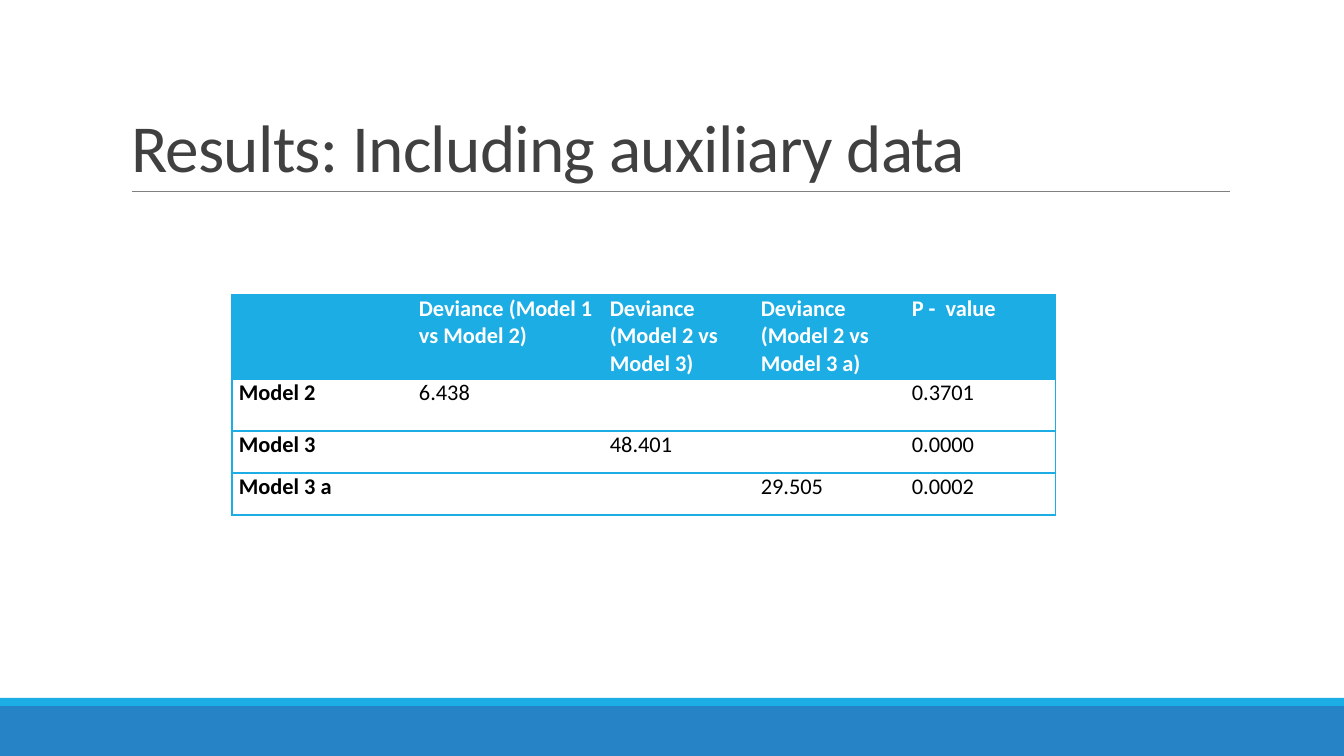
from lxml import etree
from pptx import Presentation
from pptx.dml.color import RGBColor
from pptx.enum.shapes import MSO_CONNECTOR, MSO_SHAPE
from pptx.enum.text import MSO_ANCHOR, MSO_AUTO_SIZE, PP_ALIGN
from pptx.oxml.ns import qn
from pptx.util import Pt

RECTANGLE, STRAIGHT = MSO_SHAPE.RECTANGLE, MSO_CONNECTOR.STRAIGHT
BOTTOM, TOP = MSO_ANCHOR.BOTTOM, MSO_ANCHOR.TOP
LEFT, NO_FIT = PP_ALIGN.LEFT, MSO_AUTO_SIZE.NONE
NO_GRID_STYLE = "{2D5ABB26-0587-4C30-8999-92F81FD0307C}"

THEME = {
    "accent": "1CADE4", "band": "2683C6", "rule": "808080",
    "title": "404040", "header": "FFFFFF", "body": "000000",
    "font": "Calibri", "title_size": 48, "table_size": 16,
}


def px(count):
    return round(count * 914400 / 100.8)


def format_font(font, size, color, bold=False):
    values = {"name": THEME["font"], "size": Pt(size), "bold": bold}
    for name, value in values.items():
        setattr(font, name, value)
    font.color.rgb = RGBColor.from_string(THEME[color])


presentation = Presentation()
presentation.slide_width, presentation.slide_height = px(1344), px(756)
slide = presentation.slides.add_slide(presentation.slide_layouts[5])

# Footer bands
for top, height, color in ((706, 50, "band"), (698, 8, "accent")):
    band = slide.shapes.add_shape(RECTANGLE, 0, px(top), px(1344), px(height))
    band.shadow.inherit = False
    band.fill.solid()
    band.fill.fore_color.rgb = RGBColor.from_string(THEME[color])
    band.line.fill.background()

# Rule under the title
rule = slide.shapes.add_connector(STRAIGHT, px(132), px(191), px(1230), px(191))
rule.line.width = Pt(0.5)
rule.line.color.rgb = RGBColor.from_string(THEME["rule"])
etree.SubElement(rule.element.spPr, qn("a:effectLst"))

# Title
title = slide.shapes.title
title.left, title.top, title.width, title.height = px(121), px(31), px(1109), px(160)
frame_format = {"word_wrap": True, "auto_size": NO_FIT, "vertical_anchor": BOTTOM}
for name, value in frame_format.items():
    setattr(title.text_frame, name, value)
title.text_frame.text = "Results: Including auxiliary data"
paragraph = title.text_frame.paragraphs[0]
paragraph.alignment = LEFT
paragraph.line_spacing = 0.85
run = paragraph.runs[0]
format_font(run.font, THEME["title_size"], "title")
run.font._element.set("spc", "-50")

# Results table
results = [
    ["", "Deviance (Model 1 vs Model 2)", "Deviance (Model 2 vs Model 3)",
     "Deviance (Model 2 vs Model 3 a)", "P -  value"],
    ["Model 2", "6.438", "", "", "0.3701"],
    ["Model 3", "", "48.401", "", "0.0000"],
    ["Model 3 a", "", "", "29.505", "0.0002"],
]
column_widths = [180, 191, 151, 151, 151]
row_heights = [84, 52, 42, 42]
table_frame = slide.shapes.add_table(
    len(row_heights), len(column_widths), px(232), px(295),
    px(sum(column_widths)), px(sum(row_heights)))
table = table_frame.table
table.horz_banding = False
for style in table_frame.element.iter(qn("a:tableStyleId")):
    style.text = NO_GRID_STYLE
for column, width in zip(table.columns, column_widths):
    column.width = px(width)
for row, height in zip(table.rows, row_heights):
    row.height = px(height)

cell_format = {"margin_left": px(7), "margin_right": px(7), "margin_top": 0,
               "margin_bottom": 0, "vertical_anchor": TOP}
last_column = len(column_widths) - 1
for row_index, row_texts in enumerate(results):
    for column_index, text in enumerate(row_texts):
        cell = table.cell(row_index, column_index)
        for name, value in cell_format.items():
            setattr(cell, name, value)

        # Horizontal lines everywhere, vertical lines on the outside only
        borders = {"lnL": column_index == 0, "lnR": column_index == last_column,
                   "lnT": True, "lnB": True}
        properties = cell._tc.get_or_add_tcPr()
        for tag, visible in borders.items():
            if visible:
                border = etree.SubElement(properties, qn("a:" + tag), w=str(Pt(1)))
                fill = etree.SubElement(border, qn("a:solidFill"))
                etree.SubElement(fill, qn("a:srgbClr"), val=THEME["accent"])

        is_header = row_index == 0
        if is_header:
            cell.fill.solid()
            cell.fill.fore_color.rgb = RGBColor.from_string(THEME["accent"])
        else:
            cell.fill.background()
        cell.text = text
        paragraph = cell.text_frame.paragraphs[0]
        target = paragraph.runs[0] if text else paragraph
        format_font(target.font, THEME["table_size"],
                    "header" if is_header else "body",
                    is_header or column_index == 0)

presentation.save("out.pptx")
